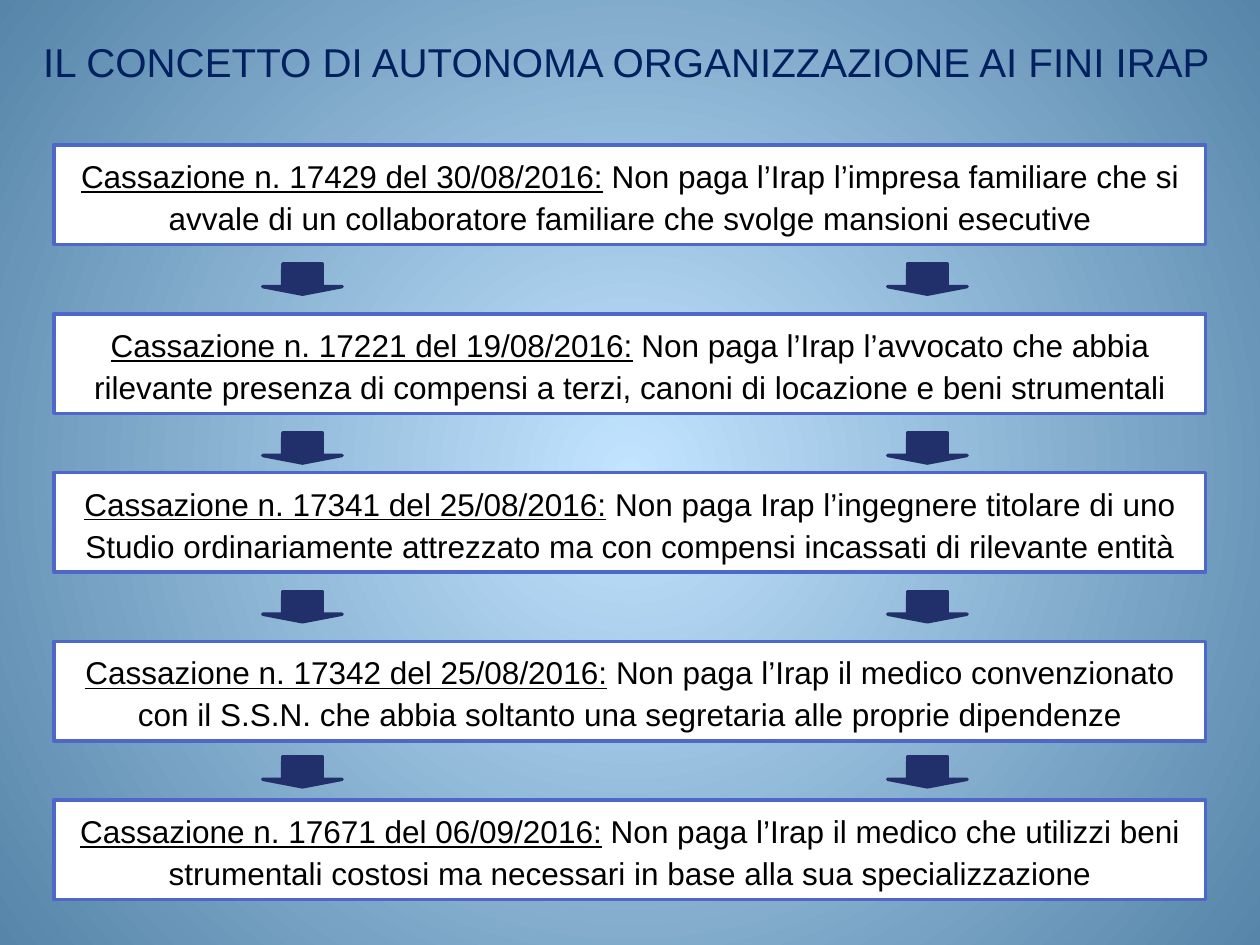
from lxml import etree
from pptx import Presentation
from pptx.dml.color import RGBColor
from pptx.enum.shapes import MSO_SHAPE
from pptx.enum.text import MSO_ANCHOR, MSO_AUTO_SIZE, PP_ALIGN
from pptx.oxml.ns import qn
from pptx.util import Inches, Pt

TITLE = "IL CONCETTO DI AUTONOMA ORGANIZZAZIONE AI FINI IRAP"
# top of the box, ruling, what it decides
RULINGS = [
    (1.15, "Cassazione n. 17429 del 30/08/2016:",
     "Non paga l’Irap l’impresa familiare che si avvale di un collaboratore "
     "familiare che svolge mansioni esecutive"),
    (2.49, "Cassazione n. 17221 del 19/08/2016:",
     "Non paga l’Irap l’avvocato che abbia rilevante presenza di compensi a "
     "terzi, canoni di locazione e beni strumentali"),
    (3.75, "Cassazione n. 17341 del 25/08/2016:",
     "Non paga Irap l’ingegnere titolare di uno Studio ordinariamente "
     "attrezzato ma con compensi incassati di rilevante entità"),
    (5.09, "Cassazione n. 17342 del 25/08/2016:",
     "Non paga l’Irap il medico convenzionato con il S.S.N. che abbia soltanto "
     "una segretaria alle proprie dipendenze"),
    (6.35, "Cassazione n. 17671 del 06/09/2016:",
     "Non paga l’Irap il medico che utilizzi beni strumentali costosi ma "
     "necessari in base alla sua specializzazione"),
]
ARROW_LEFTS = (2.28, 7.24)
ARROW_TOPS = (1.9, 3.24, 4.5, 5.81)

# Striped arrow pointing right, in thousandths of an inch (240 x 630)
ARROW_CONTOURS = [
    [(38, 158), (180, 158), (180, 0), (240, 315), (180, 630), (180, 472), (38, 472)],
    [(15, 158), (30, 158), (30, 472), (15, 472)],
    [(0, 158), (8, 158), (8, 472), (0, 472)],
]


def color(hex_value):
    return RGBColor.from_string(hex_value)


def set_format(target, values):
    for name, value in values.items():
        setattr(target, name, value)


class SlideBuilder:
    font_name = "Arial"
    title_color = "002060"
    text_color = "000000"
    box_fill = "FFFFFF"
    box_line = "4E67C8"
    arrow_color = "21306A"
    glow = ("C2E4FF", "5685A9")

    def __init__(self, slide):
        self.slide = slide

    def background(self):
        """Fill the slide with a gradient spreading from its centre."""
        fill = self.slide.background.fill
        fill.gradient()
        for stop, hex_value in zip(fill.gradient_stops, self.glow):
            stop.color.rgb = color(hex_value)
        properties = self.slide.background._cSld.bg.bgPr
        linear = properties.find(".//" + qn("a:lin"))
        radial = etree.Element(qn("a:path"), {"path": "circle"})
        etree.SubElement(radial, qn("a:fillToRect"),
                         {side: "50000" for side in "ltrb"})
        linear.getparent().replace(linear, radial)

    def paint(self, shape, fill, line):
        shape.shadow.inherit = False
        shape.fill.solid()
        shape.fill.fore_color.rgb = color(fill)
        shape.line.color.rgb = color(line)
        shape.line.width = Pt(2)

    def run(self, paragraph, text, size, hex_value, underline=False):
        run = paragraph.add_run()
        run.text = text
        set_format(run.font, {"name": self.font_name, "size": Pt(size),
                              "underline": underline})
        run.font.color.rgb = color(hex_value)

    def title(self, text):
        shape = self.slide.shapes.title
        set_format(shape, {"left": Inches(0.08), "top": Inches(0.13),
                           "width": Inches(9.8), "height": Inches(0.71)})
        set_format(shape.text_frame, {"vertical_anchor": MSO_ANCHOR.MIDDLE,
                                      "auto_size": MSO_AUTO_SIZE.NONE,
                                      "word_wrap": True})
        paragraph = shape.text_frame.paragraphs[0]
        set_format(paragraph, {"alignment": PP_ALIGN.CENTER,
                               "space_before": Pt(4.6)})
        self.run(paragraph, text, 23, self.title_color)

    def box(self, top, ruling, decision):
        shape = self.slide.shapes.add_shape(
            MSO_SHAPE.RECTANGLE, Inches(0.43), Inches(top), Inches(9.14), Inches(0.79))
        self.paint(shape, self.box_fill, self.box_line)
        set_format(shape.text_frame, {"vertical_anchor": MSO_ANCHOR.MIDDLE,
                                      "word_wrap": True})
        paragraph = shape.text_frame.paragraphs[0]
        set_format(paragraph, {"alignment": PP_ALIGN.CENTER,
                               "line_spacing": Pt(24)})
        self.run(paragraph, ruling, 18, self.text_color, underline=True)
        self.run(paragraph, " " + decision, 18, self.text_color)

    def down_arrow(self, left, top):
        first, *others = ARROW_CONTOURS
        builder = self.slide.shapes.build_freeform(*first[0], scale=Inches(1) / 1000)
        builder.add_line_segments(first[1:])
        for contour in others:
            builder.move_to(*contour[0])
            builder.add_line_segments(contour[1:])
        shape = builder.convert_to_shape(Inches(left), Inches(top))
        shape.rotation = 90
        self.paint(shape, self.arrow_color, self.arrow_color)


def main():
    presentation = Presentation()
    set_format(presentation, {"slide_width": Inches(10), "slide_height": Inches(7.5)})
    title_only = presentation.slide_layouts[5]
    builder = SlideBuilder(presentation.slides.add_slide(title_only))
    builder.background()
    builder.title(TITLE)
    for ruling in RULINGS:
        builder.box(*ruling)
    for top in ARROW_TOPS:
        for left in ARROW_LEFTS:
            builder.down_arrow(left, top)
    presentation.save("out.pptx")


if __name__ == "__main__":
    main()
